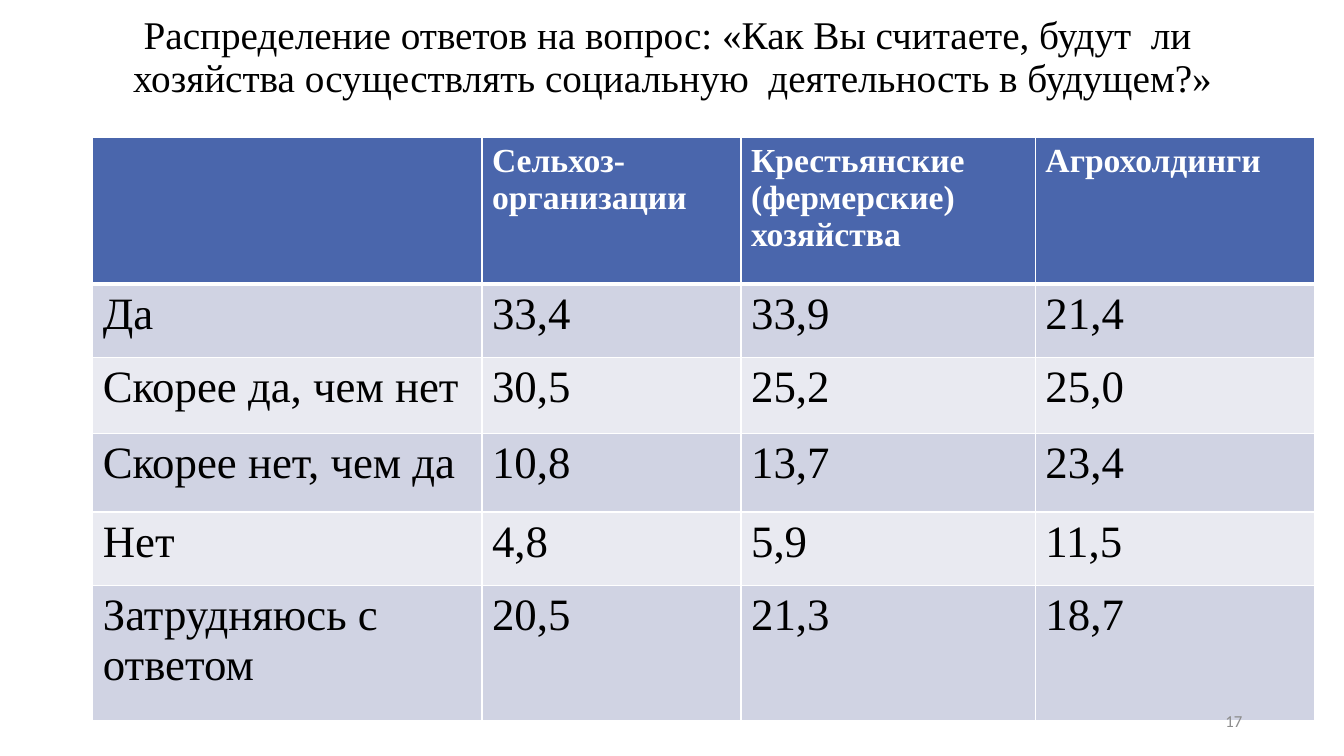
"""Build the survey slide on the future social activity of farms."""
from dataclasses import dataclass

from lxml.etree import SubElement
from pptx import Presentation
from pptx.dml.color import RGBColor as Rgb
from pptx.enum.text import MSO_ANCHOR as Anchor, PP_ALIGN as Align
from pptx.oxml.ns import qn
from pptx.util import Emu, Pt

EMU_PER_PX = 9144
COLORS = {
    "text": "000000",
    "header": "4A66AC",
    "odd": "D0D3E3",
    "even": "E9EAF1",
    "white": "FFFFFF",
    "number": "8C8C8C",
}
FORMATS = {
    "title": {"size": Pt(28), "name": "Times New Roman", "bold": False},
    "header": {"size": Pt(24), "name": "Times New Roman", "bold": True},
    "answer": {"size": Pt(32), "name": "Times New Roman", "bold": False},
    "number": {"size": Pt(12), "name": "Calibri", "bold": False},
}
COLUMN_WIDTHS = (386, 257, 292, 277)
ROW_HEIGHTS = (146, 73, 75, 78, 73, 134)
ANSWERS = (
    ("", "Сельхоз-\nорганизации", "Крестьянские (фермерские) хозяйства", "Агрохолдинги"),
    ("Да", "33,4", "33,9", "21,4"),
    ("Скорее да, чем нет", "30,5", "25,2", "25,0"),
    ("Скорее нет, чем да", "10,8", "13,7", "23,4"),
    ("Нет", "4,8", "5,9", "11,5"),
    ("Затрудняюсь с ответом", "20,5", "21,3", "18,7"),
)


@dataclass(frozen=True)
class Caption:
    text: str
    left: int
    top: int
    width: int
    height: int
    style: str
    color: str
    align: Align
    spacing: float


CAPTIONS = (
    Caption(
        "Распределение ответов на вопрос: «Как Вы считаете, будут  ли  хозяйства "
        "осуществлять социальную  деятельность в будущем?»",
        92, 15, 1150, 86, "title", "text", Align.CENTER, 0.9,
    ),
    Caption("17", 942, 695, 300, 40, "number", "number", Align.RIGHT, 1.0),
)


def px(length: int) -> Emu:
    return Emu(length * EMU_PER_PX)


def write(frame, text: str, style: str, color: str) -> None:
    frame.text = text
    for paragraph in frame.paragraphs:
        for attribute, value in FORMATS[style].items():
            setattr(paragraph.font, attribute, value)
        paragraph.font.color.rgb = Rgb.from_string(COLORS[color])


def draw_caption(slide, caption: Caption) -> None:
    box = slide.shapes.add_textbox(
        px(caption.left), px(caption.top), px(caption.width), px(caption.height)
    )
    frame = box.text_frame
    frame.word_wrap = True
    frame.vertical_anchor = Anchor.MIDDLE
    write(frame, caption.text, caption.style, caption.color)
    frame.paragraphs[0].alignment = caption.align
    frame.paragraphs[0].line_spacing = caption.spacing


def draw_borders(cell, widths: dict[str, int]) -> None:
    properties = cell._tc.get_or_add_tcPr()
    for position, (side, width) in enumerate(widths.items()):
        border = SubElement(properties, qn(f"a:{side}"), w=str(Pt(width)))
        fill = SubElement(border, qn("a:solidFill"))
        SubElement(fill, qn("a:srgbClr"), val=COLORS["white"])
        properties.insert(position, border)


def draw_answers(slide, left: int, top: int) -> None:
    table = slide.shapes.add_table(
        len(ROW_HEIGHTS), len(COLUMN_WIDTHS), px(left), px(top),
        px(sum(COLUMN_WIDTHS)), px(sum(ROW_HEIGHTS)),
    ).table
    for column, width in zip(table.columns, COLUMN_WIDTHS):
        column.width = px(width)
    for index, (row, height, texts) in enumerate(zip(table.rows, ROW_HEIGHTS, ANSWERS)):
        row.height = px(height)
        style, color = ("answer", "text") if index else ("header", "white")
        band = ("even", "odd")[index % 2] if index else "header"
        widths = {
            "lnL": 1, "lnR": 1,
            "lnT": 3 if index == 1 else 1,
            "lnB": 1 if index else 3,
        }
        for cell, text in zip(row.cells, texts):
            write(cell.text_frame, text, style, color)
            cell.fill.solid()
            cell.fill.fore_color.rgb = Rgb.from_string(COLORS[band])
            draw_borders(cell, widths)


def main() -> None:
    deck = Presentation()
    deck.slide_width, deck.slide_height = px(1333), px(750)
    slide = deck.slides.add_slide(deck.slide_layouts[6])
    title, number = CAPTIONS
    draw_caption(slide, title)
    draw_answers(slide, 92, 136)
    draw_caption(slide, number)
    deck.save("out.pptx")


if __name__ == "__main__":
    main()
